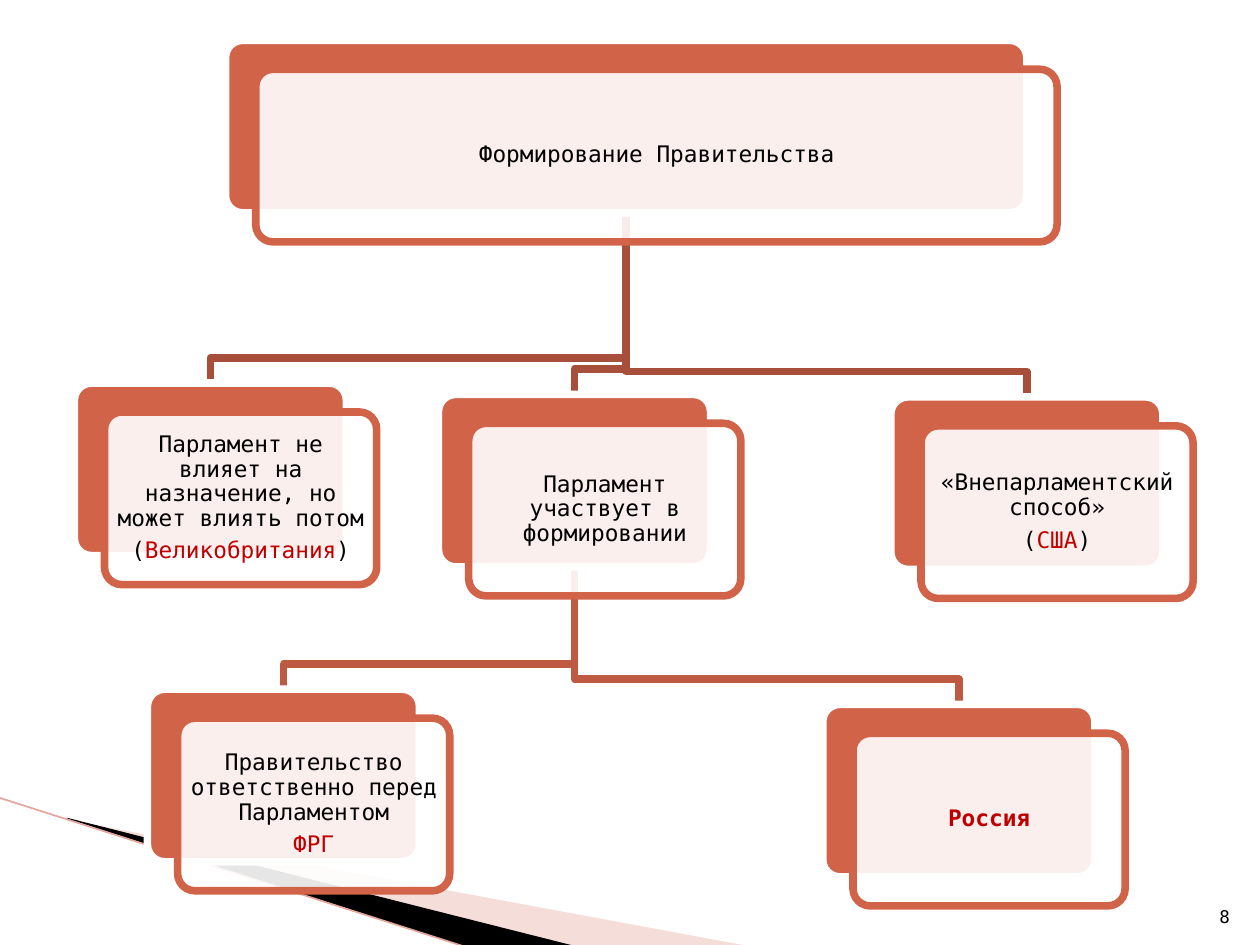
import lxml.etree
import pptx
import pptx.util
import pptx.dml.color
import pptx.enum.shapes
import pptx.enum.text
import pptx.oxml.ns

RGBColor = pptx.dml.color.RGBColor
MSO_SHAPE = pptx.enum.shapes.MSO_SHAPE
PP_ALIGN = pptx.enum.text.PP_ALIGN
MSO_ANCHOR = pptx.enum.text.MSO_ANCHOR
qn = pptx.oxml.ns.qn

FONT = "DejaVu Sans Mono"
WHITE = RGBColor(0xFF, 0xFF, 0xFF)
BLACK = RGBColor(0x00, 0x00, 0x00)
RED = RGBColor(0xC0, 0x00, 0x00)
TERRACOTTA = RGBColor(0xD1, 0x63, 0x49)
LINK_UPPER = RGBColor(0xA7, 0x4F, 0x3A)
LINK_LOWER = RGBColor(0xBE, 0x5A, 0x42)
WEDGE_PINK = RGBColor(0xE7, 0xAC, 0xA4)
WEDGE_LINE = RGBColor(0xE3, 0xA5, 0x9C)

# Grid of 100 columns by 75 rows
COLS, ROWS = 100, 75
BOX_H = 13.7
ROOT_W, NODE_W = 63.6, 21.6
SHIFT_X, SHIFT_Y = 2.4, 2.3      # front card against back card
STUB = 2                         # last drop of a link, in rows
LINE_W = 4.33

# name: (column, row, width, paragraphs of (text, colour, bold) runs)
NODES = {
    "root": (17.9, 3.2, ROOT_W, [[("Формирование Правительства", BLACK, False)]]),
    "takes part": (34.8, 31.3, NODE_W, [
        [("Парламент участвует в формировании", BLACK, False)]]),
    "germany": (11.7, 54.7, NODE_W, [
        [("Правительство ответственно перед Парламентом", BLACK, False)],
        [("ФРГ", RED, False)]]),
    "russia": (65.3, 55.9, NODE_W, [[("Россия", RED, True)]]),
    "britain": (5.9, 30.4, NODE_W, [
        [("Парламент не влияет на назначение, но может влиять потом", BLACK, False)],
        [("(", BLACK, False), ("Великобритания", RED, False), (")", BLACK, False)]]),
    "usa": (70.7, 31.5, NODE_W, [
        [("«Внепарламентский способ»", BLACK, False)],
        [("(", BLACK, False), ("США", RED, False), (")", BLACK, False)]]),
}

LINKS = [
    ("root", "usa", LINK_UPPER),
    ("root", "britain", LINK_UPPER),
    ("takes part", "russia", LINK_LOWER),
    ("takes part", "germany", LINK_LOWER),
    ("root", "takes part", LINK_UPPER),
]


def cell(n):
    """Length of n grid cells."""
    return pptx.util.Inches(n / 10)


def set_alpha(sp, percent):
    clr = sp.element.spPr.find(qn("a:solidFill")).find(qn("a:srgbClr"))
    lxml.etree.SubElement(clr, qn("a:alpha")).set("val", str(percent * 1000))


def style(sp, fill=None, line=None, alpha=None):
    sp.shadow.inherit = False
    if fill is None:
        sp.fill.background()
    else:
        sp.fill.solid()
        sp.fill.fore_color.rgb = fill
    if alpha is not None:
        set_alpha(sp, alpha)
    if line is None:
        sp.line.fill.background()
    else:
        sp.line.color.rgb = line
        sp.line.width = pptx.util.Pt(LINE_W)


def write_text(sp, paragraphs, size=13, align=PP_ALIGN.CENTER,
               anchor=MSO_ANCHOR.MIDDLE, inset=0.05, spacing=0.9, after=4.55):
    tf = sp.text_frame
    tf.word_wrap = True
    tf.vertical_anchor = anchor
    tf.margin_left = tf.margin_right = pptx.util.Inches(inset)
    tf.margin_top = tf.margin_bottom = pptx.util.Inches(0.05)
    for i, runs in enumerate(paragraphs):
        p = tf.paragraphs[0] if i == 0 else tf.add_paragraph()
        p.alignment = align
        p.line_spacing = spacing
        p.space_after = pptx.util.Pt(after)
        for text, color, bold in runs:
            r = p.add_run()
            r.text = text
            r.font.name = FONT
            r.font.size = pptx.util.Pt(size)
            r.font.bold = bold
            r.font.color.rgb = color


def add_path(s, points, close, **look):
    pts = [(cell(x), cell(y)) for x, y in points]
    fb = s.shapes.build_freeform(*pts[0])
    fb.add_line_segments(pts[1:], close=close)
    style(fb.convert_to_shape(), **look)


def add_card(s, col, row, width, **look):
    sp = s.shapes.add_shape(MSO_SHAPE.ROUNDED_RECTANGLE, cell(col), cell(row),
                            cell(width), cell(BOX_H))
    sp.adjustments[0] = 0.1
    style(sp, **look)
    return sp


def add_node(s, col, row, width, paragraphs):
    add_card(s, col, row, width, fill=TERRACOTTA, line=WHITE)
    front = add_card(s, col + SHIFT_X, row + SHIFT_Y, width,
                     fill=WHITE, alpha=90, line=TERRACOTTA)
    write_text(front, paragraphs)


def add_link(s, parent, child, color):
    px, py, pw, _ = NODES[parent]
    cx, cy, cw, _ = NODES[child]
    x1, x2, bend = px + pw / 2, cx + cw / 2, cy - STUB
    add_path(s, [(x1, py + BOX_H), (x1, bend), (x2, bend), (x2, cy)],
             close=False, line=color)


def add_corner_wedge(s):
    add_path(s, [(5.5, 65.1), (59.5, 75.1), (45.6, 75.1), (5.5, 65)],
             close=True, fill=WEDGE_PINK, alpha=40)
    add_path(s, [(5.3, 64.9), (45.7, 75.1), (37.2, 75.2), (5.4, 65)],
             close=True, fill=BLACK)
    edge = s.shapes.add_connector(pptx.enum.shapes.MSO_CONNECTOR.STRAIGHT,
                                  cell(-0.1), cell(63.3), cell(37.1), cell(75.2))
    edge.line.color.rgb = WEDGE_LINE
    edge.line.width = pptx.util.Pt(0.95)
    lxml.etree.SubElement(edge.element.spPr, qn("a:effectLst"))


def add_page_number(s):
    sp = s.shapes.add_textbox(cell(94.6), cell(70.1), cell(4), cell(4))
    write_text(sp, [[("8", BLACK, False)]], size=10, align=PP_ALIGN.RIGHT,
               anchor=MSO_ANCHOR.BOTTOM, inset=0.1, spacing=1.0, after=0)


def main():
    prs = pptx.Presentation()
    prs.slide_width, prs.slide_height = cell(COLS), cell(ROWS)
    s = prs.slides.add_slide(prs.slide_layouts[6])

    # Decoration in the lower left corner
    add_corner_wedge(s)

    # Hierarchy: links behind, cards in front
    for link in LINKS:
        add_link(s, *link)
    for node in NODES.values():
        add_node(s, *node)

    add_page_number(s)
    prs.save("out.pptx")


if __name__ == "__main__":
    main()
